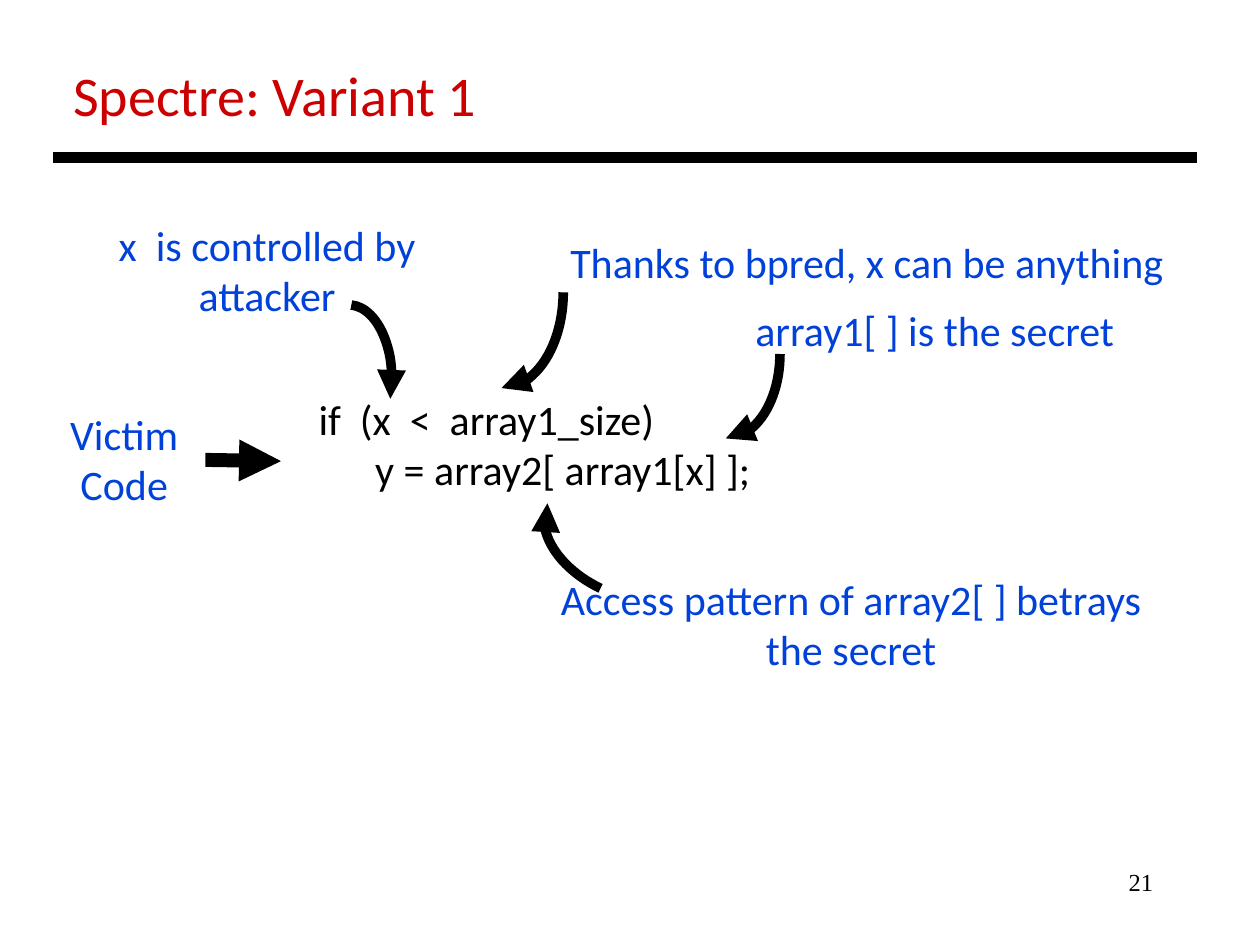
from lxml import etree
from pptx import Presentation
from pptx import util as u
from pptx.dml.color import RGBColor
from pptx.enum import shapes, text
from pptx.oxml.ns import qn

W, H = 10, 7.5
BLACK, RED, BLUE = "000000", "CC0000", "0041DA"
LEFT, CENTER, RIGHT = text.PP_ALIGN.LEFT, text.PP_ALIGN.CENTER, text.PP_ALIGN.RIGHT


def rgb(value):
    return RGBColor.from_string(value)


def inches(*values):
    return [u.Inches(v) for v in values]


def place(sp, box):
    sp.left, sp.top, sp.width, sp.height = inches(*box)


def write(sp, words, color, size=24, font="Calibri", align=CENTER, wrap=True):
    tf = sp.text_frame
    tf.text = words
    tf.word_wrap = wrap
    tf.auto_size = text.MSO_AUTO_SIZE.NONE
    tf.vertical_anchor = text.MSO_ANCHOR.TOP
    for p in tf.paragraphs:
        p.alignment = align
        for r in p.runs:
            r.font.size, r.font.name = u.Pt(size), font
            r.font.color.rgb = rgb(color)
    return tf


def label(s, box, words, color=BLUE, **style):
    return write(s.shapes.add_textbox(*inches(*box)), words, color, **style)


def stroke(sp, width, arrow=True):
    sp.line.color.rgb = rgb(BLACK)
    sp.line.width = u.Pt(width)
    if arrow:
        etree.SubElement(sp.line._get_or_add_ln(), qn("a:tailEnd"), type="triangle")


def straight(s, start, end, width, arrow=True):
    sp = s.shapes.add_connector(shapes.MSO_CONNECTOR.STRAIGHT, *inches(*start, *end))
    stroke(sp, width, arrow)
    etree.SubElement(sp._element.spPr, qn("a:effectLst"))


def curved(s, box, rotation=90, start=270, end=0):
    """Arc arrow; start and end are in degrees, clockwise from the right."""
    sp = s.shapes.add_shape(shapes.MSO_SHAPE.ARC, *inches(*box))
    sp.adjustments[0], sp.adjustments[1] = start * 0.6, end * 0.6
    sp.rotation = rotation
    sp.fill.background()
    sp.shadow.inherit = False
    stroke(sp, 5.5)


def header(s, box):
    x, y, w, h = box
    title = s.shapes.title
    place(title, (x + 0.06, y, 3.44, 0.64))
    write(title, "Spectre: Variant 1", RED, size=32, align=LEFT, wrap=False)
    straight(s, (x, y + h), (x + w, y + h), 6, arrow=False)


def victim_code(s, box):
    x, y, w, h = box
    label(s, (x, y + 0.12, 1.29, h), "Victim Code")
    straight(s, (x + 1.29, y + 0.58), (x + 1.89, y + 0.59), 8)
    tf = label(s, (x + 2.09, y, w - 2.09, h),
               "if  (x  <  array1_size)\ny = array2[ array1[x] ];",
               BLACK, align=LEFT, wrap=False)
    # Indent the body of the condition
    tf.paragraphs[1]._p.get_or_add_pPr().set("marL", str(u.Inches(0.45)))


def annotations(s):
    # Each note comes with the arrow that leads to the code
    notes = [
        ("x  is controlled by attacker", (0.65, 1.69, 2.94, 0.91),
         dict(box=(2.43, 2.42, 0.68, 1.18), rotation=0, start=271.8, end=25.3)),
        ("array1[ ] is the secret", (5.3, 2.37, 4.24, 0.51),
         dict(box=(5.09, 2.38, 1.34, 0.86))),
        ("Access pattern of array2[ ] betrays the secret", (4.17, 4.5, 5.17, 0.91),
         dict(box=(4.28, 3.85, 1.34, 0.86), rotation=205.3)),
        ("Thanks to bpred, x can be anything", (3.39, 1.83, 6.98, 0.51),
         dict(box=(3.22, 1.83, 1.52, 0.98))),
    ]
    for words, box, arrow in notes:
        label(s, box, words)
        curved(s, **arrow)


def main():
    prs = Presentation()
    prs.slide_width, prs.slide_height = inches(W, H)
    s = prs.slides.add_slide(prs.slide_layouts[5])
    header(s, (0.42, 0.43, 9.08, 0.82))
    victim_code(s, (0.34, 3.07, 5.75, 0.91))
    annotations(s)
    # Slide number
    label(s, (7.17, 6.83, 2.08, 0.5), "21", BLACK, size=14,
          font="Times New Roman", align=RIGHT)
    prs.save("out.pptx")


if __name__ == "__main__":
    main()
